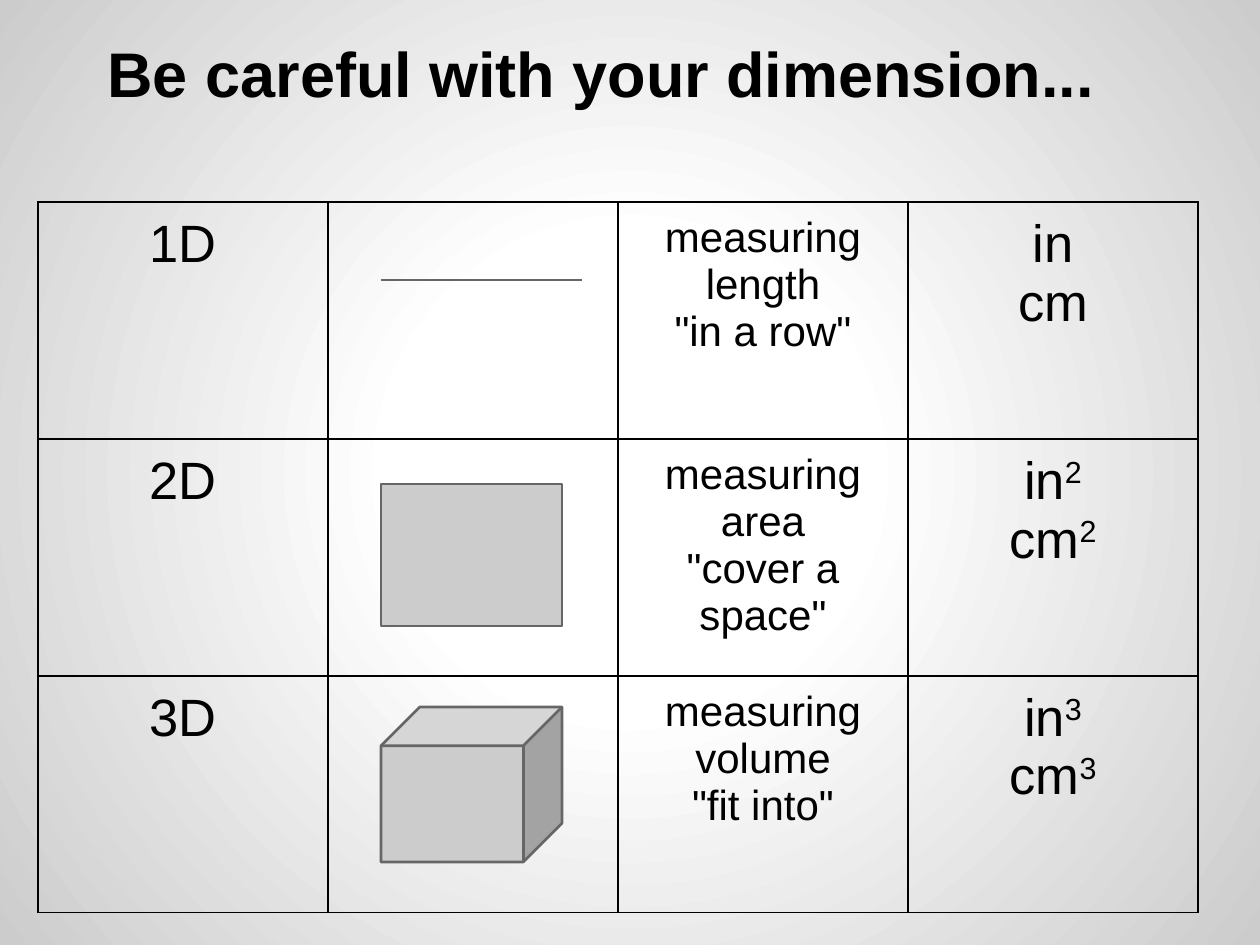
from dataclasses import dataclass

from pptx import Presentation
from pptx.dml.color import RGBColor
from pptx.enum.shapes import MSO_CONNECTOR, MSO_SHAPE
from pptx.enum.text import MSO_ANCHOR, PP_ALIGN
from pptx.oxml import parse_xml
from pptx.oxml.ns import nsdecls
from pptx.util import Inches, Pt

PX_PER_INCH = 126
INSET = 13
TABLE_LEFT, TABLE_TOP = 38, 202
COLUMN_WIDTH, ROW_HEIGHT = 290, 237
FIGURE_LEFT = 381

ROWS = [
    ("1D", ["measuring length", '"in a row"'], ""),
    ("2D", ["measuring area", '"cover a space"'], "2"),
    ("3D", ["measuring volume", '"fit into"'], "3"),
]
UNITS = ["in", "cm"]


@dataclass(frozen=True)
class Theme:
    """Colours, font and type sizes of the slide."""

    font: str = "Arial"
    text: str = "000000"
    figure_fill: str = "CCCCCC"
    figure_line: str = "666666"
    glow_centre: str = "FFFFFF"
    glow_edge: str = "CCCCCC"
    title_size: int = 36
    label_size: int = 30
    meaning_size: int = 24
    figure_line_width: float = 1.5
    border_width: float = 0.75


THEME = Theme()


def px(length):
    """Turn whole pixels into EMU."""
    return round(length * Inches(1) / PX_PER_INCH)


def paint_background(slide):
    """Give the slide a round gradient that darkens towards its edges."""
    stops = [(0, THEME.glow_centre), (30, THEME.glow_centre), (100, THEME.glow_edge)]
    stop_xml = "".join(
        f'<a:gs pos="{position * 1000}"><a:srgbClr val="{color}"/></a:gs>'
        for position, color in stops
    )
    background = parse_xml(
        f'<p:bg {nsdecls("p", "a")}><p:bgPr><a:gradFill><a:gsLst>{stop_xml}</a:gsLst>'
        '<a:path path="circle"><a:fillToRect l="50000" t="50000" r="50000" b="50000"/>'
        "</a:path></a:gradFill><a:effectLst/></p:bgPr></p:bg>"
    )
    slide.element.cSld.insert(0, background)


def add_run(paragraph, text, size, bold=False, superscript=False):
    """Append one formatted run to a paragraph."""
    run = paragraph.add_run()
    run.text = text
    run.font.name = THEME.font
    run.font.size = Pt(size)
    run.font.bold = bold
    run.font.color.rgb = RGBColor.from_string(THEME.text)
    if superscript:
        run.font._element.set("baseline", "30000")


def set_margins(target):
    """Set equal insets on a text frame or a table cell."""
    target.margin_left = target.margin_right = px(INSET)
    target.margin_top = target.margin_bottom = px(INSET)


def write_title(slide, text):
    """Place and fill the title placeholder."""
    title = slide.shapes.title
    title.left, title.top, title.width, title.height = map(px, (63, 34, 1134, 89))
    frame = title.text_frame
    set_margins(frame)
    frame.vertical_anchor = MSO_ANCHOR.BOTTOM
    frame.word_wrap = True
    paragraph = frame.paragraphs[0]
    paragraph.alignment = PP_ALIGN.LEFT
    properties = paragraph._p.get_or_add_pPr()
    properties.set("marL", "0")
    properties.set("indent", str(Inches(0.25)))
    add_run(paragraph, text, THEME.title_size, bold=True)


def outline_cell(cell):
    """Draw all four borders of a cell and leave it unfilled."""
    properties = cell._tc.get_or_add_tcPr()
    for side in "LRTB":
        properties.append(parse_xml(
            f'<a:ln{side} {nsdecls("a")} w="{Pt(THEME.border_width)}"><a:solidFill>'
            f'<a:srgbClr val="{THEME.text}"/></a:solidFill></a:ln{side}>'
        ))
    cell.fill.background()


def write_cell(cell, lines, size, exponent=""):
    """Write centred paragraphs, each with an optional exponent."""
    frame = cell.text_frame
    for index, line in enumerate(lines):
        paragraph = frame.add_paragraph() if index else frame.paragraphs[0]
        paragraph.alignment = PP_ALIGN.CENTER
        add_run(paragraph, line, size)
        if exponent:
            add_run(paragraph, exponent, size, superscript=True)


def add_dimension_table(slide):
    """Add the table of dimensions, meanings and units."""
    table = slide.shapes.add_table(
        len(ROWS), 4, px(TABLE_LEFT), px(TABLE_TOP),
        px(4 * COLUMN_WIDTH), px(len(ROWS) * ROW_HEIGHT),
    ).table
    table.first_row = table.horz_banding = False
    for cell in table.iter_cells():
        set_margins(cell)
        outline_cell(cell)
    for row, (dimension, meaning, exponent) in enumerate(ROWS):
        write_cell(table.cell(row, 0), [dimension], THEME.label_size)
        write_cell(table.cell(row, 2), meaning, THEME.meaning_size)
        write_cell(table.cell(row, 3), UNITS, THEME.label_size, exponent)


def style_line(line):
    """Apply the outline shared by all figures."""
    line.color.rgb = RGBColor.from_string(THEME.figure_line)
    line.width = Pt(THEME.figure_line_width)


def add_segment(slide, left, top, width):
    """Add a horizontal line without a shadow."""
    connector = slide.shapes.add_connector(
        MSO_CONNECTOR.STRAIGHT, px(left), px(top), px(left + width), px(top)
    )
    style_line(connector.line)
    connector._element.spPr.append(parse_xml(f'<a:effectLst {nsdecls("a")}/>'))


def add_solid(slide, kind, left, top, width, height):
    """Add a filled preset shape."""
    shape = slide.shapes.add_shape(kind, *map(px, (left, top, width, height)))
    shape.shadow.inherit = False
    shape.fill.solid()
    shape.fill.fore_color.rgb = RGBColor.from_string(THEME.figure_fill)
    style_line(shape.line)


def main():
    """Build and save the slide."""
    presentation = Presentation()
    presentation.slide_width, presentation.slide_height = px(1260), px(945)
    slide = presentation.slides.add_slide(presentation.slide_layouts[5])
    paint_background(slide)
    write_title(slide, "Be careful with your dimension...")
    add_dimension_table(slide)
    add_solid(slide, MSO_SHAPE.RECTANGLE, FIGURE_LEFT, 484, 181, 142)
    add_segment(slide, FIGURE_LEFT, 280, 201)
    add_solid(slide, MSO_SHAPE.CUBE, FIGURE_LEFT, 707, 181, 155)
    presentation.save("out.pptx")


if __name__ == "__main__":
    main()
